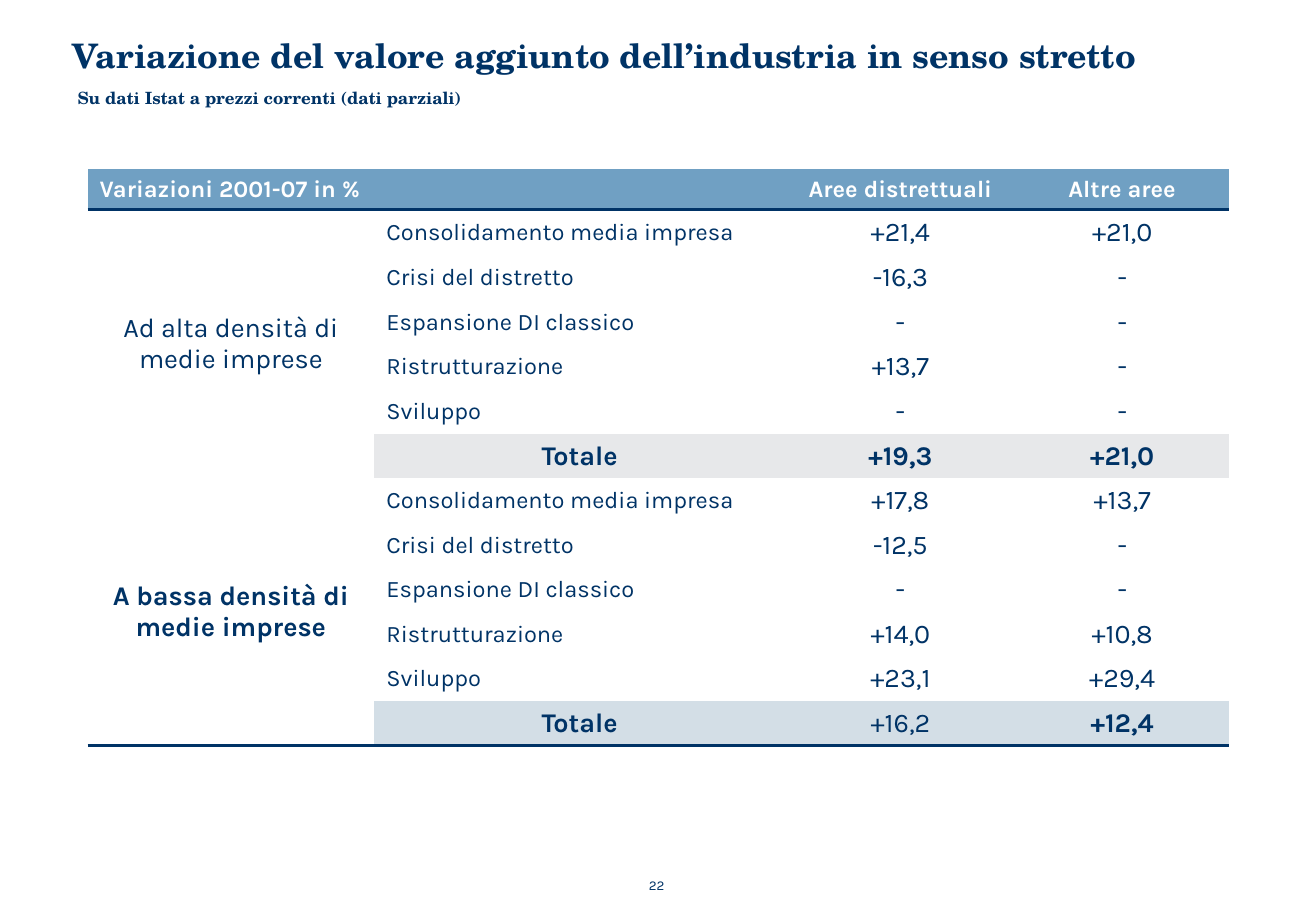
from dataclasses import dataclass

from lxml import etree
from pptx import Presentation
from pptx.dml.color import RGBColor
from pptx.enum import text
from pptx.oxml import ns
from pptx.util import Inches, Pt


@dataclass(frozen=True)
class Theme:
    navy: str = "003366"
    white: str = "FFFFFF"
    header: str = "70A0C3"
    high_total: str = "E7E8EA"
    low_total: str = "D3DEE6"
    heading_font: str = "TeX Gyre Schola"
    body_font: str = "Karla"
    title_size: int = 20
    value_size: int = 16
    label_size: int = 14
    subtitle_size: int = 10
    page_size: int = 8
    rule_width: int = 2


THEME = Theme()
LEFT, CENTER = text.PP_ALIGN.LEFT, text.PP_ALIGN.CENTER
PLAIN_TABLE_STYLE = "{2D5ABB26-0587-4C30-8999-92F81FD0307C}"

COLUMN_WIDTHS = (2.36, 3.38, 1.9, 1.75)
HEADER_HEIGHT, FIRST_HEIGHT, ROW_HEIGHT = 0.33, 0.38, 0.36
HEADINGS = ("Variazioni 2001-07 in %", "", "Aree distrettuali", "Altre aree")
PHASES = ("Consolidamento media impresa", "Crisi del distretto",
          "Espansione DI classico", "Ristrutturazione", "Sviluppo")


@dataclass(frozen=True)
class DensityGroup:
    name: str
    name_bold: bool
    changes: tuple
    totals: tuple
    totals_bold: tuple
    total_fill: str


GROUPS = (
    DensityGroup(
        "Ad alta densità di medie imprese", False,
        (("+21,4", "+21,0"), ("-16,3", "-"), ("-", "-"), ("+13,7", "-"), ("-", "-")),
        ("+19,3", "+21,0"), (True, True), THEME.high_total),
    DensityGroup(
        "A bassa densità di medie imprese", True,
        (("+17,8", "+13,7"), ("-12,5", "-"), ("-", "-"), ("+14,0", "+10,8"),
         ("+23,1", "+29,4")),
        ("+16,2", "+12,4"), (False, True), THEME.low_total),
)


def add_run(frame, words, size, font, color=THEME.navy, bold=False, align=LEFT):
    paragraph = frame.paragraphs[0]
    paragraph.alignment = align
    run = paragraph.add_run()
    run.text = words
    run.font.name, run.font.size, run.font.bold = font, Pt(size), bold
    run.font.color.rgb = RGBColor.from_string(color)


def add_label(slide, box, words, size, font, bold=True, margins=(0.1, 0.05),
              anchor=text.MSO_ANCHOR.TOP, wrap=True):
    frame = slide.shapes.add_textbox(*map(Inches, box)).text_frame
    frame.word_wrap = wrap
    frame.vertical_anchor = anchor
    frame.margin_left = frame.margin_right = Inches(margins[0])
    frame.margin_top = frame.margin_bottom = Inches(margins[1])
    add_run(frame, words, size, font, bold=bold)


def size_empty_cell(cell):
    """Keep the default 18 pt of an empty cell from stretching its row."""
    end = etree.SubElement(cell.text_frame.paragraphs[0]._p, ns.qn("a:endParaRPr"),
                           sz=str(THEME.label_size * 100))
    etree.SubElement(end, ns.qn("a:latin"), typeface=THEME.body_font)


def fill_cell(cell, words, size=THEME.value_size, color=THEME.navy, bold=False,
              align=CENTER, fill=None):
    cell.vertical_anchor = text.MSO_ANCHOR.MIDDLE
    if fill:
        cell.fill.solid()
        cell.fill.fore_color.rgb = RGBColor.from_string(fill)
    else:
        cell.fill.background()
    if words:
        add_run(cell.text_frame, words, size, THEME.body_font, color, bold, align)
    else:
        size_empty_cell(cell)


def rule_below(cell):
    line = etree.Element(ns.qn("a:lnB"), w=str(Pt(THEME.rule_width)))
    solid = etree.SubElement(line, ns.qn("a:solidFill"))
    etree.SubElement(solid, ns.qn("a:srgbClr"), val=THEME.navy)
    cell._tc.get_or_add_tcPr().insert(0, line)


def fill_header(table):
    for column, heading in enumerate(HEADINGS):
        fill_cell(table.cell(0, column), heading, THEME.label_size, THEME.white,
                  True, CENTER if column else LEFT, THEME.header)
        rule_below(table.cell(0, column))


def fill_group(table, top, group):
    total_row = top + len(PHASES)
    fill_cell(table.cell(top, 0), group.name, bold=group.name_bold)
    table.cell(top, 0).merge(table.cell(total_row, 0))
    for row in range(top + 1, total_row + 1):
        fill_cell(table.cell(row, 0), "")
    for row, (phase, changes) in enumerate(zip(PHASES, group.changes), top):
        fill_cell(table.cell(row, 1), phase, THEME.label_size, align=LEFT)
        for column, change in enumerate(changes, 2):
            fill_cell(table.cell(row, column), change)
    totals = zip(("Totale", *group.totals), (True, *group.totals_bold))
    for column, (total, bold) in enumerate(totals, 1):
        fill_cell(table.cell(total_row, column), total, bold=bold,
                  fill=group.total_fill)


def add_variation_table(slide):
    group_rows = len(PHASES) + 1
    row_count = 1 + group_rows * len(GROUPS)
    heights = [HEADER_HEIGHT, FIRST_HEIGHT] + [ROW_HEIGHT] * (row_count - 2)
    table = slide.shapes.add_table(
        row_count, len(COLUMN_WIDTHS), Inches(0.72), Inches(1.39),
        Inches(sum(COLUMN_WIDTHS)), Inches(sum(heights))).table
    table.horz_banding = table.first_row = False
    table._tbl.tblPr.find(ns.qn("a:tableStyleId")).text = PLAIN_TABLE_STYLE
    for column, width in zip(table.columns, COLUMN_WIDTHS):
        column.width = Inches(width)
    for row, height in zip(table.rows, heights):
        row.height = Inches(height)

    fill_header(table)
    for index, group in enumerate(GROUPS):
        fill_group(table, 1 + index * group_rows, group)
    rule_below(table.cell(row_count - group_rows, 0))
    for column in range(len(COLUMN_WIDTHS)):
        rule_below(table.cell(row_count - 1, column))


def main():
    deck = Presentation()
    deck.slide_width, deck.slide_height = Inches(10.83), Inches(7.5)
    slide = deck.slides.add_slide(deck.slide_layouts[6])
    add_label(slide, (0.5, 0.24, 9.84, 0.52),
              "Variazione del valore aggiunto dell’industria in senso stretto",
              THEME.title_size, THEME.heading_font)
    add_label(slide, (0.54, 0.65, 9.84, 0.31),
              "Su dati Istat a prezzi correnti (dati parziali)",
              THEME.subtitle_size, THEME.heading_font,
              anchor=text.MSO_ANCHOR.MIDDLE)
    add_variation_table(slide)
    add_label(slide, (5.23, 7.15, 0.37, 0.34), "22", THEME.page_size,
              THEME.body_font, bold=False, margins=(0.11, 0.1), wrap=False)
    deck.save("out.pptx")


if __name__ == "__main__":
    main()
